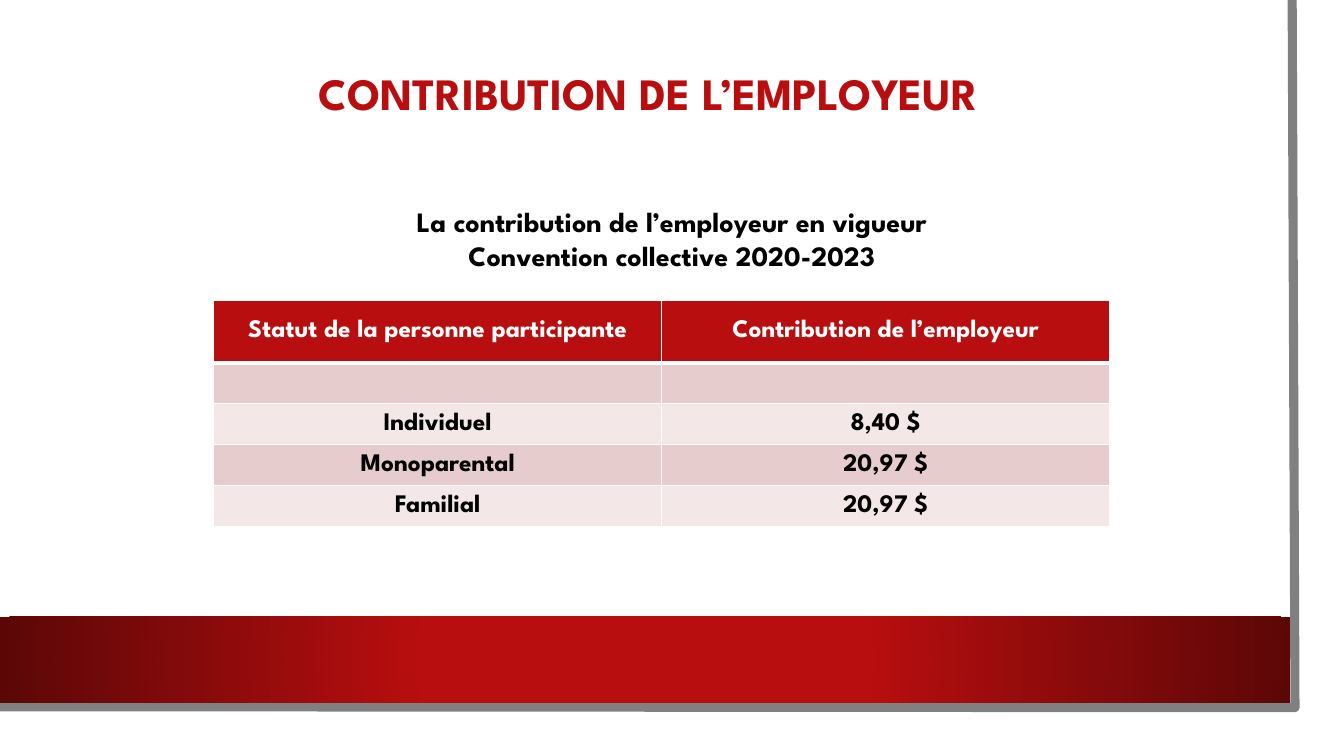
from lxml import etree
from pptx import Presentation
from pptx.dml.color import RGBColor
from pptx.enum.shapes import MSO_SHAPE
from pptx.enum.text import MSO_ANCHOR, PP_ALIGN
from pptx.oxml import parse_xml
from pptx.oxml.ns import nsdecls, qn
from pptx.util import Pt

RECTANGLE = MSO_SHAPE.RECTANGLE
MIDDLE = MSO_ANCHOR.MIDDLE
CENTER = PP_ALIGN.CENTER

FONT = "League Spartan"
RED = RGBColor(0xB8, 0x0E, 0x0F)
DARK_RED = RGBColor(0x5C, 0x07, 0x07)
PINK = RGBColor(0xE6, 0xCC, 0xCC)
PALE_PINK = RGBColor(0xF3, 0xE7, 0xE7)
GREY = RGBColor(0x80, 0x80, 0x80)
WHITE = RGBColor(0xFF, 0xFF, 0xFF)
BLACK = RGBColor(0, 0, 0)

CONTRIBUTIONS = [
    ("Statut de la personne participante", "Contribution de l’employeur"),
    ("", ""),
    ("Individuel", "8,40 $"),
    ("Monoparental", "20,97 $"),
    ("Familial", "20,97 $"),
]


def write_text(frame, text, *, size, color, line_spacing=None):
    for index, line in enumerate(text.split("\n")):
        para = frame.add_paragraph() if index else frame.paragraphs[0]
        para.alignment = CENTER
        if line_spacing:
            para.line_spacing = line_spacing
        span = para.add_run()
        span.text = line
        span.font.name = FONT
        span.font.size = Pt(size)
        span.font.bold = True
        span.font.color.rgb = color


def add_text_box(page, left, top, width, height, text, **text_format):
    box = page.shapes.add_textbox(Pt(left), Pt(top), Pt(width), Pt(height))
    box.text_frame.word_wrap = True
    write_text(box.text_frame, text, **text_format)


def add_rectangle(page, left, top, width, height, color):
    box = page.shapes.add_shape(RECTANGLE, Pt(left), Pt(top), Pt(width), Pt(height))
    box.shadow.inherit = False
    box.fill.solid()
    box.fill.fore_color.rgb = color
    box.line.fill.background()
    return box


def set_radial_gradient(box, inner, outer):
    gradient = parse_xml(
        f'<a:gradFill {nsdecls("a")} rotWithShape="1"><a:gsLst>'
        f'<a:gs pos="34000"><a:srgbClr val="{inner}"/></a:gs>'
        f'<a:gs pos="100000"><a:srgbClr val="{outer}"/></a:gs></a:gsLst>'
        '<a:path path="circle">'
        '<a:fillToRect l="50000" t="50000" r="50000" b="50000"/>'
        "</a:path></a:gradFill>"
    )
    properties = box.element.spPr
    properties.replace(properties.find(qn("a:solidFill")), gradient)


def add_edge(page, points, color, weight):
    start, *rest = [(Pt(x), Pt(y)) for x, y in points]
    builder = page.shapes.build_freeform(*start)
    builder.add_line_segments(rest, close=False)
    edge = builder.convert_to_shape()
    edge.shadow.inherit = False
    edge.fill.background()
    edge.line.color.rgb = color
    edge.line.width = Pt(weight)


def set_borders(cell, color, **weights):
    properties = cell._tc.get_or_add_tcPr()
    for side in "LRTB":
        line = etree.SubElement(properties, qn(f"a:ln{side}"))
        line.set("w", str(Pt(weights.get(side, 1))))
        fill = etree.SubElement(line, qn("a:solidFill"))
        etree.SubElement(fill, qn("a:srgbClr")).set("val", str(color))


def add_contribution_table(page, left, top, column_width, header_height, row_height):
    row_count, column_count = len(CONTRIBUTIONS), len(CONTRIBUTIONS[0])
    height = header_height + row_height * (row_count - 1)
    table = page.shapes.add_table(
        row_count, column_count, Pt(left), Pt(top),
        Pt(column_width * column_count), Pt(height),
    ).table
    for column in table.columns:
        column.width = Pt(column_width)
    for row_index, values in enumerate(CONTRIBUTIONS):
        is_header = row_index == 0
        table.rows[row_index].height = Pt(header_height if is_header else row_height)
        band = PINK if row_index % 2 else PALE_PINK
        for column_index, value in enumerate(values):
            cell = table.cell(row_index, column_index)
            set_borders(cell, WHITE, T=3 if row_index == 1 else 1, B=3 if is_header else 1)
            cell.fill.solid()
            cell.fill.fore_color.rgb = RED if is_header else band
            cell.vertical_anchor = MIDDLE
            if value:
                write_text(cell.text_frame, value, size=18,
                           color=WHITE if is_header else BLACK)


def main():
    deck = Presentation()
    deck.slide_width, deck.slide_height = Pt(960), Pt(540)
    page = deck.slides.add_slide(deck.slide_layouts[6])

    add_rectangle(page, 0, 0, 943, 523.5, WHITE)
    add_edge(page, [(923, 0), (925, 505.5), (-2, 504.8)], GREY, 6.5)
    band = add_rectangle(page, 0, 440.6, 921.6, 61.4, RED)
    set_radial_gradient(band, RED, DARK_RED)

    add_text_box(page, 54, 48, 818.6, 69, "CONTRIBUTION DE L’EMPLOYEUR",
                 size=32, color=RED, line_spacing=0.9)
    add_contribution_table(page, 152.7, 214.8, 320, 44.4, 29.3)
    add_text_box(page, 123, 142.5, 714, 55.5,
                 "La contribution de l’employeur en vigueur\n"
                 "Convention collective 2020-2023",
                 size=20, color=BLACK)

    deck.save("out.pptx")


if __name__ == "__main__":
    main()
